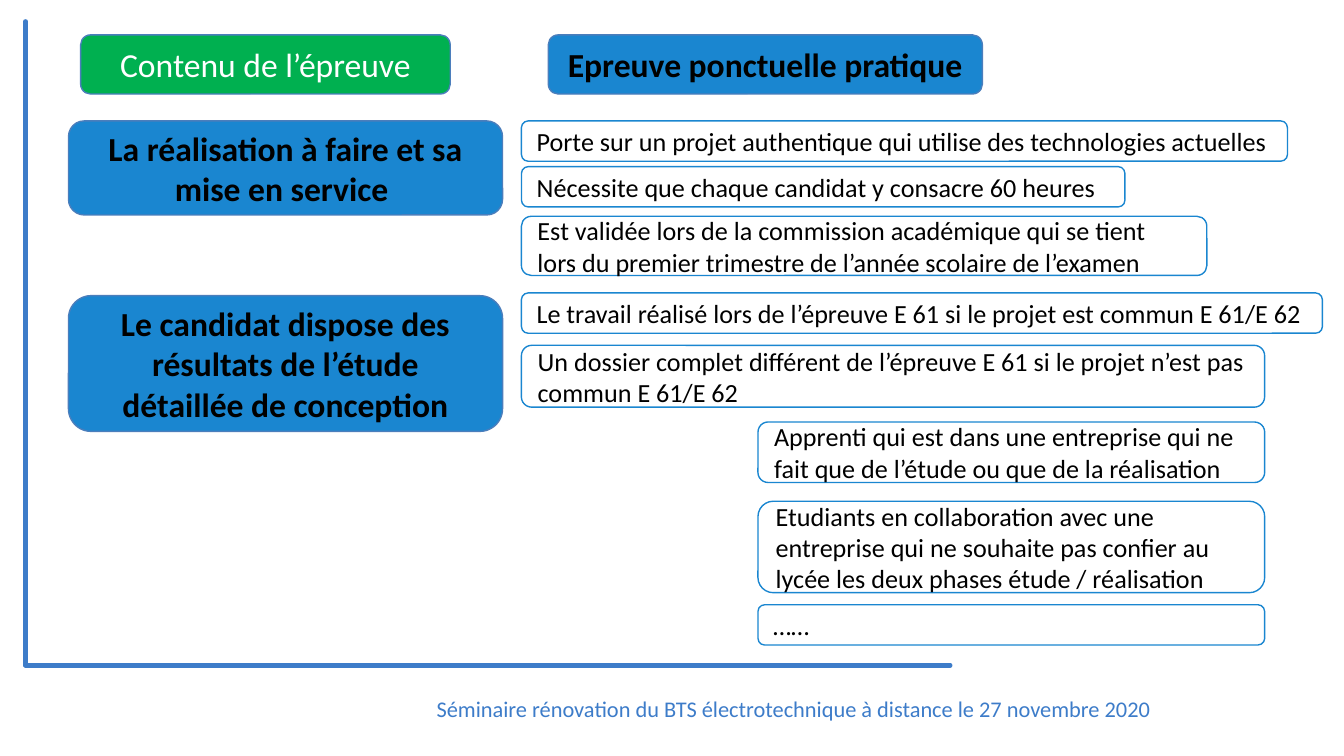
from lxml import etree
from pptx import Presentation
from pptx.dml.color import RGBColor
from pptx.enum.shapes import MSO_CONNECTOR, MSO_SHAPE
from pptx.enum.text import MSO_ANCHOR, PP_ALIGN
from pptx.oxml.ns import qn
from pptx.util import Inches, Pt

ROUNDED = MSO_SHAPE.ROUNDED_RECTANGLE
STRAIGHT = MSO_CONNECTOR.STRAIGHT
MIDDLE = MSO_ANCHOR.MIDDLE
LEFT, CENTER = PP_ALIGN.LEFT, PP_ALIGN.CENTER

FONT = "Calibri"
COLORS = {
    "frame": "3D7CC9",
    "heading_line": "4B7EBC",
    "green": "00B050",
    "blue": "1A86D0",
    "white": "FFFFFF",
    "black": "000000",
}
SLIDE_WIDTH = Inches(10)
SLIDE_HEIGHT = SLIDE_WIDTH * 9 // 16
HEADING_WIDTH = 3.23
DETAIL_OFFSET = 3.37
CASE_OFFSET = 5.13
CASE_WIDTH = 3.77


def color(name):
    return RGBColor.from_string(COLORS[name])


def write(frame, text, size, ink, bold=False, align=LEFT):
    frame.word_wrap = True
    frame.text = text
    paragraph = frame.paragraphs[0]
    paragraph.alignment = align
    font = paragraph.runs[0].font
    font.name, font.size, font.bold = FONT, Pt(size), bold
    font.color.rgb = color(ink)


def add_card(slide, box, text, size, fill, line, ink, bold=False, align=LEFT):
    card = slide.shapes.add_shape(ROUNDED, *map(Inches, box))
    card.shadow.inherit = False
    card.fill.solid()
    card.fill.fore_color.rgb = color(fill)
    card.line.color.rgb = color(line)
    card.line.width = Pt(0.75)
    card.text_frame.vertical_anchor = MIDDLE
    write(card.text_frame, text, size, ink, bold, align)


def add_heading(slide, box, text, fill="blue", ink="black", bold=True):
    add_card(slide, box, text, 18, fill, "heading_line", ink, bold, CENTER)


def add_detail(slide, box, text):
    add_card(slide, box, text, 14, "white", "blue", "black")


def add_frame(slide, left, top, width, height):
    bottom = top + height
    for end_x, end_y in ((left + width, bottom), (left, top)):
        rule = slide.shapes.add_connector(
            STRAIGHT, *map(Inches, (left, bottom, end_x, end_y)))
        rule.line.color.rgb = color("frame")
        rule.line.width = Pt(2.5)
        properties = rule._element.spPr
        properties.find(qn("a:ln")).set("cap", "rnd")
        etree.SubElement(properties, qn("a:effectLst"))


def add_footer(slide, left, top, width, height):
    footer = slide.shapes.add_textbox(*map(Inches, (left, top, width, height)))
    write(footer.text_frame,
          "Séminaire rénovation du BTS électrotechnique à distance le 27 novembre 2020",
          12, "frame")


def add_header(slide, left, top, height):
    add_heading(slide, (left, top, 2.75, height), "Contenu de l’épreuve",
                "green", "white", False)
    add_heading(slide, (left + 3.48, top, HEADING_WIDTH, height),
                "Epreuve ponctuelle pratique")


def add_section(slide, left, top, height, heading, details):
    add_heading(slide, (left, top, HEADING_WIDTH, height), heading)
    for offset_x, offset_y, detail_width, detail_height, text in details:
        add_detail(slide, (left + offset_x, top + offset_y,
                           detail_width, detail_height), text)


REALISATION = [
    (DETAIL_OFFSET, 0, 5.7, 0.3,
     "Porte sur un projet authentique qui utilise des technologies actuelles"),
    (DETAIL_OFFSET, 0.34, 4.49, 0.3,
     "Nécessite que chaque candidat y consacre 60 heures"),
    (DETAIL_OFFSET, 0.71, 5.1, 0.44,
     "Est validée lors de la commission académique qui se tient lors du "
     "premier trimestre de l’année scolaire de l’examen"),
]
CONCEPTION = [
    (DETAIL_OFFSET, -0.02, 5.96, 0.3,
     "Le travail réalisé lors de l’épreuve E 61 si le projet est commun E 61/E 62"),
    (DETAIL_OFFSET, 0.37, 5.53, 0.46,
     "Un dossier complet différent de l’épreuve E 61 si le projet n’est pas "
     "commun E 61/E 62"),
    (CASE_OFFSET, 0.94, CASE_WIDTH, 0.45,
     "Apprenti qui est dans une entreprise qui ne fait que de l’étude ou que "
     "de la réalisation"),
    (CASE_OFFSET, 1.53, CASE_WIDTH, 0.68,
     "Etudiants en collaboration avec une entreprise qui ne souhaite pas "
     "confier au lycée les deux phases étude / réalisation"),
    (CASE_OFFSET, 2.3, CASE_WIDTH, 0.3, "……"),
]


def main():
    deck = Presentation()
    deck.slide_width, deck.slide_height = SLIDE_WIDTH, SLIDE_HEIGHT
    slide = deck.slides.add_slide(deck.slide_layouts.get_by_name("Blank"))
    add_frame(slide, 0.19, 0.16, 6.88, 4.79)
    add_footer(slide, 3.15, 5.12, 5.66, 0.3)
    add_header(slide, 0.6, 0.26, 0.44)
    add_section(slide, 0.51, 0.9, 0.7,
                "La réalisation à faire et sa mise en service ", REALISATION)
    add_section(slide, 0.51, 2.2, 1.01,
                "Le candidat dispose des résultats de l’étude détaillée de conception",
                CONCEPTION)
    deck.save("out.pptx")


if __name__ == "__main__":
    main()
